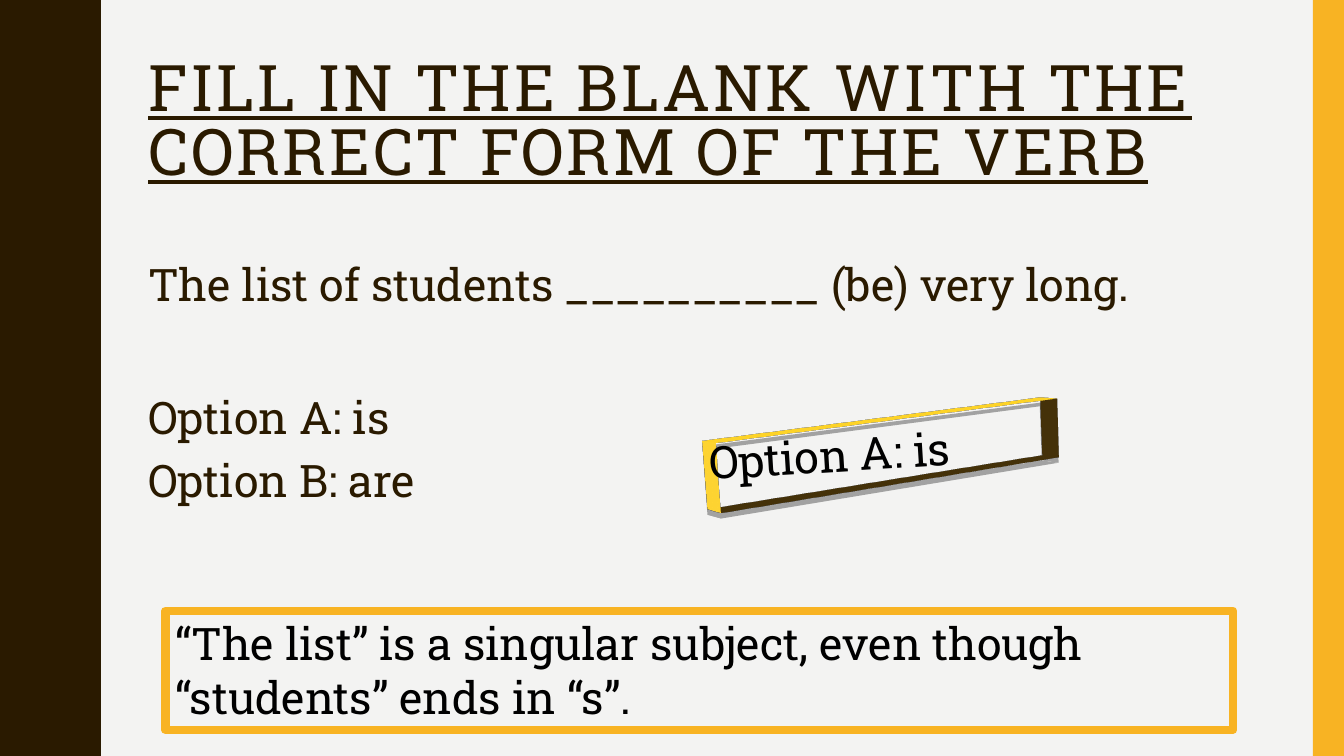
from lxml import etree
from pptx import Presentation
from pptx.dml.color import RGBColor
from pptx.enum import shapes as kinds, text as t
from pptx.util import Inches, Pt

FONT = "Roboto Slab"
BROWN, GOLD, PAPER, BLACK = "2A1A00", "F8B323", "F3F3F2", "000000"
WIDTH, HEIGHT = 13.33, 7.5
DRAWING_NS = "http://schemas.openxmlformats.org/drawingml/2006/main"

# Outer crest of one half wave: x position and drop from the wave's start
HALF_WAVE = [(0.78, 0), (0.78, 0.07), (0.79, 0.14), (0.8, 0.2), (0.81, 0.25),
             (0.83, 0.29), (0.85, 0.33), (0.87, 0.38), (0.89, 0.42),
             (0.91, 0.46), (0.93, 0.5), (0.95, 0.55), (0.96, 0.61),
             (0.97, 0.68), (0.97, 0.75)]
WAVE_LENGTH = 1.5

TILTED_SLAB = f"""<root xmlns:a="{DRAWING_NS}">
<a:effectLst><a:outerShdw blurRad="225425" dist="50800" dir="5220000" algn="ctr">
<a:srgbClr val="000000"><a:alpha val="33000"/></a:srgbClr></a:outerShdw></a:effectLst>
<a:scene3d><a:camera prst="perspectiveFront" fov="3300000">
<a:rot lat="486000" lon="19530000" rev="174000"/></a:camera>
<a:lightRig rig="harsh" dir="t"><a:rot lat="0" lon="0" rev="3000000"/></a:lightRig></a:scene3d>
<a:sp3d extrusionH="254000" contourW="19050">
<a:bevelT w="82550" h="44450" prst="angle"/><a:bevelB w="82550" h="44450" prst="angle"/>
<a:contourClr><a:srgbClr val="FFFFFF"/></a:contourClr></a:sp3d></root>"""


def color(hex_code):
    return RGBColor.from_string(hex_code)


def place(shape, box):
    shape.left, shape.top, shape.width, shape.height = map(Inches, box)


def style(paragraph, size, hex_code):
    font = paragraph.font
    font.name, font.size = FONT, Pt(size)
    font.color.rgb = color(hex_code)
    paragraph.alignment = t.PP_ALIGN.LEFT


def fill_plain(shape, hex_code):
    shape.fill.solid()
    shape.fill.fore_color.rgb = color(hex_code)
    shape.line.fill.background()
    shape.shadow.inherit = False


def add_wavy_edge(slide):
    outline = [(0, 0)]
    for wave in range(round(HEIGHT / WAVE_LENGTH)):
        top = wave * WAVE_LENGTH
        outline += [(x, top + y) for x, y in HALF_WAVE]
        outline += [(x, top + WAVE_LENGTH - y) for x, y in HALF_WAVE[-2::-1]]
    outline.append((0, HEIGHT))
    builder = slide.shapes.build_freeform(0, 0, scale=Inches(1))
    builder.add_line_segments(outline[1:], close=True)
    fill_plain(builder.convert_to_shape(), BROWN)


def add_gold_edge(slide, width):
    edge = slide.shapes.add_shape(
        kinds.MSO_SHAPE.RECTANGLE, Inches(WIDTH - width), 0, Inches(width), Inches(HEIGHT))
    fill_plain(edge, GOLD)


def fill_title(slide, box, wording):
    title = slide.shapes.title
    place(title, box)
    frame = title.text_frame
    frame.text = wording
    frame.auto_size = t.MSO_AUTO_SIZE.NONE
    frame.vertical_anchor = t.MSO_ANCHOR.MIDDLE
    heading = frame.paragraphs[0]
    style(heading, 45.9, BROWN)
    heading.font.underline = True
    heading.line_spacing = 0.83
    heading.runs[0].font._element.set("spc", "200")


def fill_question(slide, box, question, options):
    body = slide.placeholders[1]
    place(body, box)
    frame = body.text_frame
    frame.text = "\n".join([question, *options])
    frame.auto_size = t.MSO_AUTO_SIZE.NONE
    frame.vertical_anchor = t.MSO_ANCHOR.TOP
    for line in frame.paragraphs:
        style(line, 32, BROWN)
        line.line_spacing = 1.0
        line.space_before = Pt(7)
        properties = line._p.get_or_add_pPr()
        properties.set("marL", "0")
        properties.set("indent", "0")
        etree.SubElement(properties, f"{{{DRAWING_NS}}}buNone")
        # Default run properties stay last in the paragraph properties
        properties.append(properties.find(f"{{{DRAWING_NS}}}defRPr"))
    frame.paragraphs[1].space_before = Pt(56)


def add_framed_text(slide, box, wording, line_width):
    panel = slide.shapes.add_shape(kinds.MSO_SHAPE.RECTANGLE, *map(Inches, box))
    panel.fill.background()
    panel.line.color.rgb = color(GOLD)
    panel.line.width = Pt(line_width)
    panel.shadow.inherit = False
    frame = panel.text_frame
    frame.word_wrap = True
    frame.auto_size = t.MSO_AUTO_SIZE.SHAPE_TO_FIT_TEXT
    frame.vertical_anchor = t.MSO_ANCHOR.TOP
    frame.text = wording
    style(frame.paragraphs[0], 32, BLACK)
    return panel


def tilt_in_depth(panel):
    """Replace the empty effect list by a soft shadow and a turned, extruded slab."""
    properties = panel._element.spPr
    properties.remove(properties.find(f"{{{DRAWING_NS}}}effectLst"))
    properties.extend(list(etree.fromstring(TILTED_SLAB)))


def main():
    deck = Presentation()
    deck.slide_width, deck.slide_height = Inches(WIDTH), Inches(HEIGHT)
    slide = deck.slides.add_slide(deck.slide_layouts[1])
    slide.background.fill.solid()
    slide.background.fill.fore_color.rgb = color(PAPER)

    add_wavy_edge(slide)
    add_gold_edge(slide, 0.31)
    fill_title(slide, (1.37, 0.42, 11.13, 1.63),
               "FILL IN THE BLANK WITH THE CORRECT FORM OF THE VERB")
    fill_question(slide, (1.37, 2.5, 11.13, 3.93),
                  "The list of students __________ (be) very long.",
                  ["Option A: is", "Option B: are"])
    answer = add_framed_text(slide, (6.93, 4.15, 4.07, 0.64), "Option A: is", 0.75)
    tilt_in_depth(answer)
    add_framed_text(slide, (1.64, 6.06, 10.59, 1.18),
                    "“The list” is a singular subject, even though “students” ends in “s”.", 6)
    deck.save("out.pptx")


if __name__ == "__main__":
    main()
